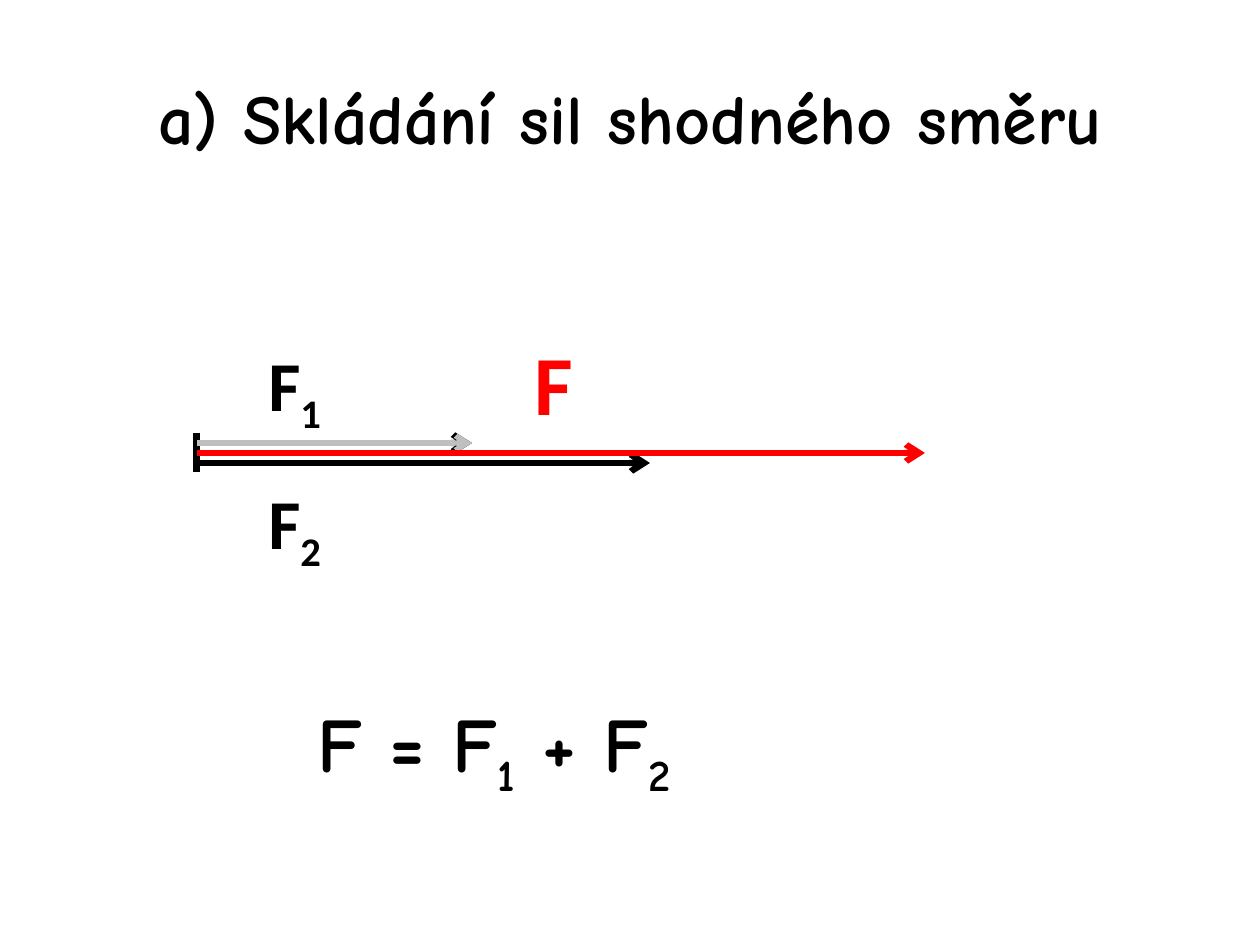
from lxml import etree
from pptx import Presentation
from pptx import util as u
from pptx.dml.color import RGBColor
from pptx.enum import shapes, text
from pptx.oxml import ns

PX = 914400 / 126
BLACK, GREY, RED = "000000", "BFBFBF", "FF0000"


def add_line(start, end, color, width, arrow=True):
    ends = [round(v * PX) for v in (*start, *end)]
    line = slide.shapes.add_connector(shapes.MSO_CONNECTOR.STRAIGHT, *ends)
    line.line.color.rgb = RGBColor.from_string(color)
    line.line.width = u.Pt(width)
    if arrow:
        etree.SubElement(line.line._get_or_add_ln(), ns.qn("a:tailEnd"), type="arrow")
    etree.SubElement(line._element.spPr, ns.qn("a:effectLst"))


def write(frame, parts, font, size, color):
    """Fill a frame with bold text; every second part is a subscript."""
    frame.word_wrap = True
    paragraph = frame.paragraphs[0]
    paragraph.font.name = font
    paragraph.font.size = u.Pt(size)
    paragraph.font.bold = True
    paragraph.font.color.rgb = RGBColor.from_string(color)
    for i, part in enumerate(parts):
        run = paragraph.add_run()
        run.text = part
        if i % 2:
            run.font._element.set("baseline", "-25000")
    return paragraph


prs = Presentation()
prs.slide_width, prs.slide_height = round(1260 * PX), round(945 * PX)
slide = prs.slides.add_slide(prs.slide_layouts[5])

title = slide.shapes.title
title.left, title.top, title.width, title.height = [
    round(v * PX) for v in (63, 38, 1134, 158)]
title.text_frame.vertical_anchor = text.MSO_ANCHOR.MIDDLE
heading = write(title.text_frame, ["a) Skládání sil shodného směru"], "Comic Neue", 40, BLACK)
heading.alignment = text.PP_ALIGN.CENTER

# Forces share one origin; the resultant is as long as both together
origin = 197
f1_length, f2_length = 275, 453
f1_y, resultant_y, f2_y = 443, 453, 463
add_line((origin, f1_y), (origin + f1_length, f1_y), BLACK, 3.5)
add_line((origin, f2_y), (origin + f2_length, f2_y), BLACK, 3.5)
add_line((origin, 433), (origin, 472), BLACK, 4, arrow=False)
add_line((origin, f1_y), (origin + f1_length, f1_y), GREY, 3)
add_line((origin, resultant_y), (origin + f1_length + f2_length, resultant_y), RED, 3.5)

labels = [
    ((256, 335, 88, 97), ["F", "1"], "Calibri", 40, BLACK),
    ((256, 473, 98, 97), ["F", "2"], "Calibri", 40, BLACK),
    ((522, 325, 79, 115), ["F"], "Calibri", 48, RED),
    ((305, 689, 552, 106), ["F = F", "1", " + F", "2"], "Comic Neue", 44, BLACK),
]
for box, parts, font, size, color in labels:
    label = slide.shapes.add_textbox(*[round(v * PX) for v in box])
    label.text_frame.auto_size = text.MSO_AUTO_SIZE.SHAPE_TO_FIT_TEXT
    write(label.text_frame, parts, font, size, color)

prs.save("out.pptx")
